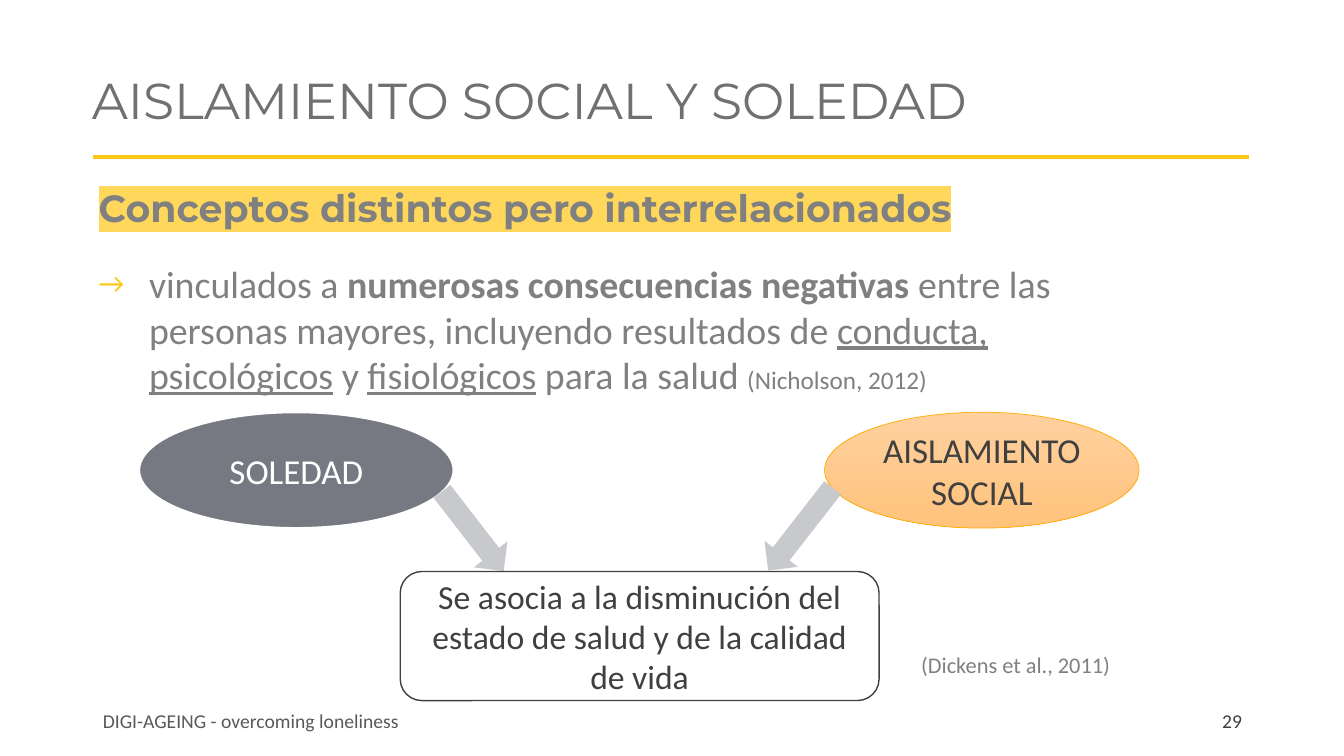
"""Builds the slide on social isolation and loneliness."""
from dataclasses import dataclass

from lxml.etree import SubElement
from pptx import Presentation
from pptx.dml.color import RGBColor as Rgb
from pptx.enum.shapes import MSO_CONNECTOR as Connector, MSO_SHAPE as Shape
from pptx.enum.text import MSO_ANCHOR as Anchor, PP_ALIGN as Align
from pptx.oxml import parse_xml
from pptx.oxml.ns import nsdecls, qn
from pptx.util import Inches, Pt

WIDTH, HEIGHT = Inches(13.33), Inches(7.5)


@dataclass(frozen=True)
class Theme:
    """Colours, fonts and type sizes of the slide."""
    heading: str = "Montserrat"
    text: str = "Calibri"
    title: str = "707070"
    body: str = "808080"
    footer: str = "595959"
    dark: str = "404040"
    white: str = "FFFFFF"
    accent: str = "FFC715"
    highlight: str = "FFD85B"
    slate: str = "767982"
    arrow: str = "C8C9CD"
    peach_top: str = "FFD19F"
    peach_bottom: str = "FFC37C"
    peach_edge: str = "FFAC06"
    title_size: float = 36
    body_size: float = 27
    concept_size: float = 25
    outcome_size: float = 24
    source_size: float = 18
    citation_size: float = 16
    footer_size: float = 14


THEME = Theme()


def rgb(code):
    """Return the colour of a hex code."""
    return Rgb.from_string(code)


def area(left, top, width, height):
    """Turn percentages of the slide into a position and size."""
    return [int(share * side / 100) for share, side in
            zip((left, top, width, height), (WIDTH, HEIGHT) * 2)]


def style(font, size, color, name=THEME.text, bold=None):
    """Set the look of a font."""
    font.size, font.name, font.bold = Pt(size), name, bold
    font.color.rgb = rgb(color)


def write(holder, words, size, color, align=Align.LEFT, anchor=Anchor.MIDDLE):
    """Put one uniform paragraph in a shape."""
    frame = holder.text_frame
    frame.word_wrap, frame.vertical_anchor = True, anchor
    paragraph = frame.paragraphs[0]
    paragraph.text, paragraph.alignment = words, align
    style(paragraph.font, size, color)
    return paragraph


def add_label(slide, place, words, size, color, align=Align.LEFT, anchor=Anchor.MIDDLE):
    """Add a line of plain text."""
    label = slide.shapes.add_textbox(*area(*place))
    write(label, words, size, color, align, anchor)
    return label


def add_block(slide, kind, place, fill, edge=None, edge_width=1):
    """Add a filled shape; two fill colours make a vertical gradient."""
    block = slide.shapes.add_shape(kind, *area(*place))
    block.shadow.inherit = False
    if isinstance(fill, tuple):
        block.fill.gradient()
        block.fill.gradient_angle = 270
        for stop, color in zip(block.fill.gradient_stops, fill):
            stop.color.rgb = rgb(color)
            stop.position = fill.index(color)
    else:
        block.fill.solid()
        block.fill.fore_color.rgb = rgb(fill)
    if edge:
        block.line.color.rgb = rgb(edge)
        block.line.width = Pt(edge_width)
    else:
        block.line.fill.background()
    return block


def add_arrow(slide, place, angle):
    """Add a turned block arrow."""
    add_block(slide, Shape.RIGHT_ARROW, place, THEME.arrow).rotation = angle


def add_title(slide, words):
    """Fill the title and draw the rule under it."""
    title = slide.shapes.title
    title.left, title.top, title.width, title.height = area(6.08, 6.27, 88.88, 14.67)
    paragraph = write(title, words, THEME.title_size, THEME.title)
    paragraph.font.name, paragraph.line_spacing = THEME.heading, 0.9
    left, top, width, _ = area(6.9, 20.8, 86.03, 0)
    rule = slide.shapes.add_connector(Connector.STRAIGHT, left, top, left + width, top)
    rule.line.color.rgb, rule.line.width = rgb(THEME.accent), Pt(3)
    SubElement(rule._element.spPr, qn("a:effectLst"))


def add_highlight(run):
    """Mark a run with the highlight colour."""
    mark = parse_xml(f'<a:highlight {nsdecls("a")}><a:srgbClr val="{THEME.highlight}"/></a:highlight>')
    run.font._element.find(qn("a:solidFill")).addnext(mark)


def add_bullet(paragraph, sign):
    """Give a paragraph a hanging bullet."""
    properties = paragraph._p.get_or_add_pPr()
    properties.set("marL", str(Inches(0.5)))
    properties.set("indent", str(-Inches(0.5)))
    color = SubElement(properties, qn("a:buClr"))
    SubElement(color, qn("a:srgbClr"), val=THEME.accent)
    SubElement(properties, qn("a:buSzPct"), val="75000")
    SubElement(properties, qn("a:buFont"), typeface=THEME.text)
    SubElement(properties, qn("a:buChar"), char=sign)


def add_body(slide, heading, pieces, source):
    """Add the highlighted heading and the bullet of (text, emphasis) pieces."""
    frame = slide.shapes.add_textbox(*area(6.6, 24.4, 80.33, 64.8)).text_frame
    frame.word_wrap = True
    lead, bullet = frame.paragraphs[0], frame.add_paragraph()
    lead.line_spacing, lead.space_after = 0.9, Pt(12)
    lead.space_before = bullet.space_before = Pt(10)
    bullet.space_after = Pt(12)
    headline = lead.add_run()
    headline.text = heading
    style(headline.font, THEME.body_size, THEME.body, THEME.heading, True)
    add_highlight(headline)
    add_bullet(bullet, "→")
    for words, emphasis in pieces + [(source, "")]:
        run = bullet.add_run()
        run.text = words
        size = THEME.source_size if words == source else THEME.body_size
        style(run.font, size, THEME.body, bold=emphasis == "bold")
        run.font.underline = emphasis == "underline"


def add_diagram(slide):
    """Draw the two concepts leading to their shared outcome."""
    soledad = add_block(slide, Shape.OVAL, (10.35, 54.53, 23.4, 15.33),
                        THEME.slate, THEME.white, 1.5)
    write(soledad, "SOLEDAD", THEME.concept_size, THEME.white, Align.CENTER)
    add_arrow(slide, (31.43, 67.47, 7.5, 5.6), 52.3)
    outcome = add_block(slide, Shape.ROUNDED_RECTANGLE, (29.78, 75.6, 35.63, 17.07),
                        THEME.white, THEME.dark)
    write(outcome, "Se asocia a la disminución del estado de salud y de la calidad de vida",
          THEME.outcome_size, THEME.dark, Align.CENTER)
    add_label(slide, (67.8, 85.47, 19.13, 4.93), "(Dickens et al., 2011)",
              THEME.citation_size, THEME.body, anchor=Anchor.TOP)
    aislamiento = add_block(slide, Shape.OVAL, (61.35, 54.53, 23.4, 15.33),
                            (THEME.peach_top, THEME.peach_bottom), THEME.peach_edge, 0.5)
    write(aislamiento, "AISLAMIENTO SOCIAL", THEME.concept_size, THEME.dark, Align.CENTER)
    add_arrow(slide, (55.65, 67.2, 7.8, 5.6), 127.9)


def main():
    """Build and save the slide."""
    deck = Presentation()
    deck.slide_width, deck.slide_height = WIDTH, HEIGHT
    slide = deck.slides.add_slide(deck.slide_layouts.get_by_name("Title Only"))
    add_title(slide, "AISLAMIENTO SOCIAL Y SOLEDAD")
    add_label(slide, (7.05, 92.67, 55.88, 5.2), "DIGI-AGEING - overcoming loneliness",
              THEME.footer_size, THEME.footer).text_frame.margin_left = Inches(0.08)
    add_body(slide, "Conceptos distintos pero interrelacionados", [
        ("vinculados a ", ""), ("numerosas consecuencias negativas", "bold"),
        (" entre las personas mayores, incluyendo resultados de ", ""),
        ("conducta,", "underline"), (" ", ""), ("psicológicos", "underline"),
        (" y ", ""), ("fisiológicos", "underline"), (" para la salud ", "")],
        "(Nicholson, 2012)")
    add_label(slide, (70.65, 92.67, 22.5, 5.33), "29",
              THEME.footer_size, THEME.dark, Align.RIGHT)
    add_diagram(slide)
    deck.save("out.pptx")


if __name__ == "__main__":
    main()
